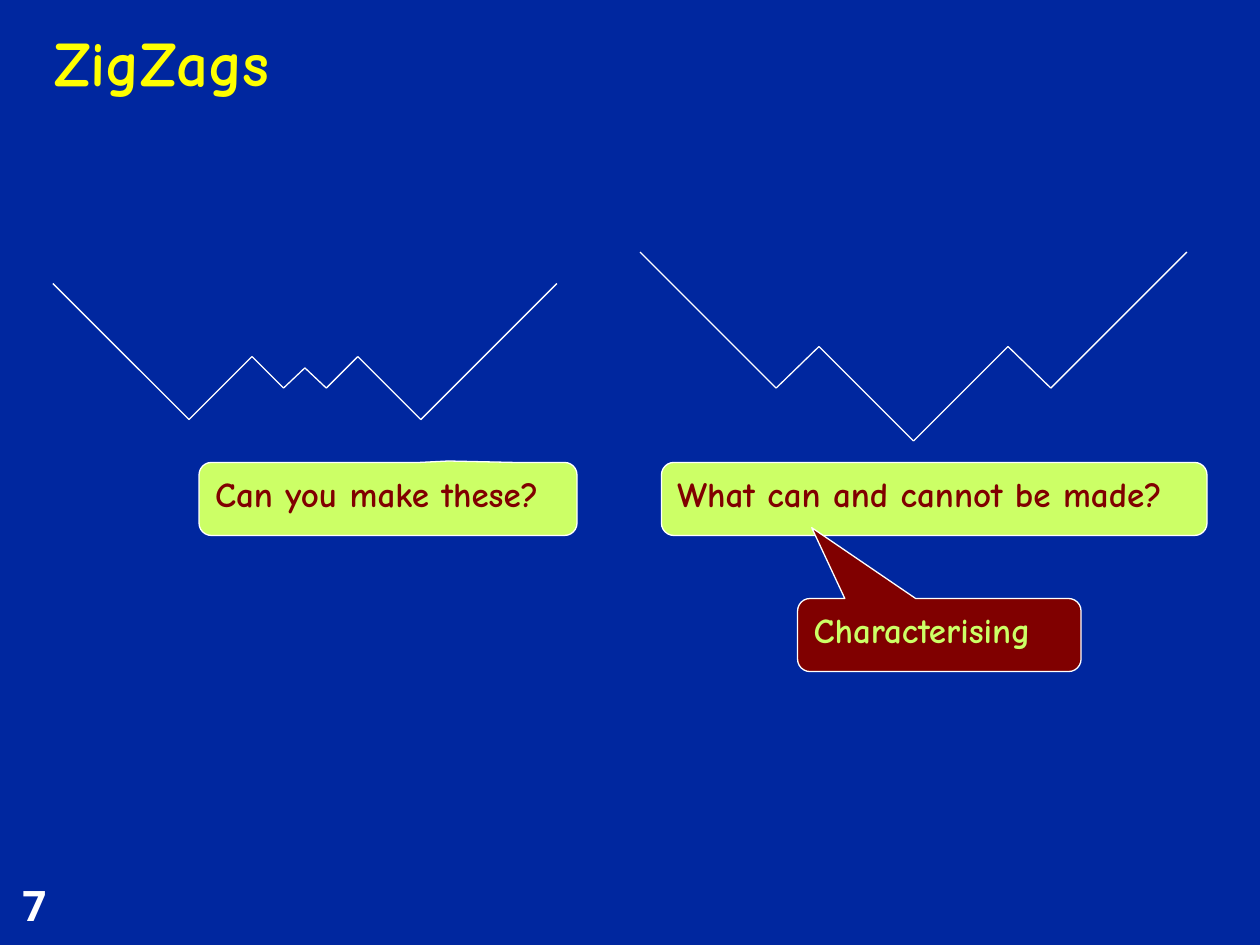
from itertools import pairwise

from lxml.etree import SubElement
from pptx import Presentation
from pptx.dml.color import RGBColor
from pptx.enum.shapes import MSO_CONNECTOR, MSO_SHAPE
from pptx.enum.text import MSO_ANCHOR, PP_ALIGN
from pptx.oxml.ns import qn
from pptx.util import Inches, Pt

HUES = {
    "blue": "00279F",
    "white": "FFFFFF",
    "yellow": "FFFF00",
    "lime": "CCFF66",
    "maroon": "800000",
}
FONTS = {
    "title": {"name": "Comic Neue", "size": Pt(36), "bold": True},
    "callout": {"name": "Comic Neue", "size": Pt(20), "bold": True},
    "number": {"name": "Open Sans", "size": Pt(24), "bold": True},
}
ZIGZAGS = [
    ((0.42, 2.25, 4, 1.08),
     [(0, 0), (1.08, 1.08), (1.58, 0.58), (1.83, 0.83), (2, 0.67)]),
    ((5.08, 2, 4.34, 1.5),
     [(0, 0), (1.08, 1.08), (1.42, 0.75), (2.17, 1.5)]),
]
CALLOUTS = [
    ((1.58, 3.67, 3, 0.58), "Can you make these?",
     "lime", "maroon", (0.16, -0.52, 0.17)),
    ((5.25, 3.67, 4.33, 0.58), "What can and cannot be made?",
     "lime", "maroon", (-0.5, -0.17, 0.17)),
    ((6.33, 4.75, 2.25, 0.58), "Characterising",
     "maroon", "lime", (-0.45, -1.47, 0.17)),
]


def hue(name):
    """Return the named colour."""
    return RGBColor.from_string(HUES[name])


def span(box):
    """Turn a box in inches into lengths."""
    return [Inches(side) for side in box]


def write(shape, text, style, tint, anchor=MSO_ANCHOR.TOP):
    """Set left-aligned text in one of the slide's styles."""
    frame = shape.text_frame
    frame.word_wrap = True
    frame.vertical_anchor = anchor
    frame.text = text
    para = frame.paragraphs[0]
    para.alignment = PP_ALIGN.LEFT
    font = para.runs[0].font
    for key, value in FONTS[style].items():
        setattr(font, key, value)
    font.color.rgb = hue(tint)


def stroke(line):
    """Give a line or outline the thin white pen."""
    line.color.rgb = hue("white")
    line.width = Pt(0.75)


def title(slide, box, text):
    """Move and fill the title placeholder."""
    shape = slide.shapes.title
    shape.left, shape.top, shape.width, shape.height = span(box)
    write(shape, text, "title", "yellow", MSO_ANCHOR.BOTTOM)


def number(slide, box, text):
    """Place the slide number."""
    write(slide.shapes.add_textbox(*span(box)), text, "number", "white")


def zigzag(slide, box, half):
    """Draw a grouped zigzag from its left half and the mirror of it."""
    left, top, width, _ = box
    whole = half + [(width - x, y) for x, y in reversed(half)]
    group = slide.shapes.add_group_shape()
    for start, end in pairwise(whole):
        if start == end:
            continue
        ends = [Inches(val) for x, y in (start, end)
                for val in (left + x, top + y)]
        line = group.shapes.add_connector(MSO_CONNECTOR.STRAIGHT, *ends)
        stroke(line.line)
        SubElement(line._element.spPr, qn("a:effectLst"))


def callout(slide, box, text, fill, tint, tip):
    """Place a rounded speech callout with its tip."""
    shape = slide.shapes.add_shape(
        MSO_SHAPE.ROUNDED_RECTANGULAR_CALLOUT, *span(box))
    for place, value in enumerate(tip):
        shape.adjustments[place] = value
    shape.shadow.inherit = False
    shape.fill.solid()
    shape.fill.fore_color.rgb = hue(fill)
    stroke(shape.line)
    write(shape, text, "callout", tint)


def main():
    """Build and save the slide."""
    deck = Presentation()
    deck.slide_width, deck.slide_height = Inches(10), Inches(7.5)
    slide = deck.slides.add_slide(deck.slide_layouts[5])
    back = slide.background.fill
    back.solid()
    back.fore_color.rgb = hue("blue")
    number(slide, (0.08, 6.93, 0.75, 0.5), "7")
    title(slide, (0.33, 0.17, 8.5, 0.67), "ZigZags")
    for box, half in reversed(ZIGZAGS):
        zigzag(slide, box, half)
    for item in CALLOUTS:
        callout(slide, *item)
    deck.save("out.pptx")


if __name__ == "__main__":
    main()
